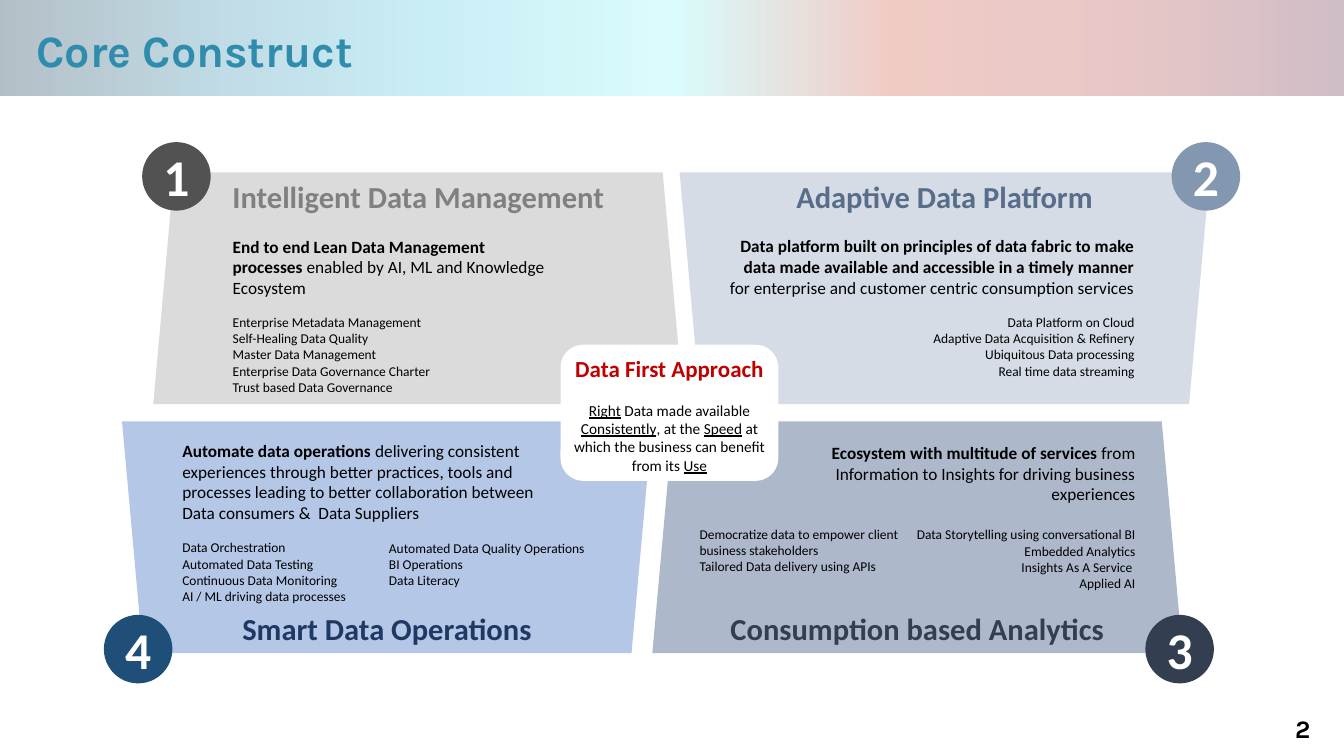
from dataclasses import dataclass

from lxml import etree
from pptx import Presentation
from pptx.dml.color import RGBColor
from pptx.enum.shapes import MSO_SHAPE
from pptx.enum.text import MSO_ANCHOR, MSO_AUTO_SIZE, PP_ALIGN
from pptx.oxml.ns import qn
from pptx.util import Inches, Pt

LEFT, CENTER, RIGHT = PP_ALIGN.LEFT, PP_ALIGN.CENTER, PP_ALIGN.RIGHT
TOP, MIDDLE = MSO_ANCHOR.TOP, MSO_ANCHOR.MIDDLE
RECT, OVAL = MSO_SHAPE.RECTANGLE, MSO_SHAPE.OVAL
ROUND, TRAPEZOID = MSO_SHAPE.ROUNDED_RECTANGLE, MSO_SHAPE.TRAPEZOID
NO_FIT = MSO_AUTO_SIZE.NONE

Box = tuple[float, float, float, float]


@dataclass(frozen=True)
class Theme:
    brand: str = "Karla"
    body: str = "Calibri"
    teal: str = "2F8CAD"
    red: str = "C00000"
    black: str = "000000"
    white: str = "FFFFFF"
    band: tuple = ((0, "042843"), (17, "2F8CAD"), (31, "4BC4DF"), (50, "86F7F9"),
                   (66, "D05342"), (84, "B14540"), (100, "602441"))
    veil: int = 70
    title: float = 32
    page: float = 18
    badge: float = 36.8
    head: float = 21.8
    core: float = 16.4
    lead: float = 12.3
    claim: float = 10.9
    item: float = 9.6


THEME = Theme()


@dataclass(frozen=True)
class Run:
    text: str
    bold: bool = False
    under: bool = False


@dataclass(frozen=True)
class Para:
    runs: tuple[Run, ...]
    size: float
    color: str = THEME.black
    gap: float = 0
    line: float = 1
    font: str = THEME.body


@dataclass(frozen=True)
class Panel:
    number: int
    head: str
    left: float
    top: float
    flip: bool
    fill: str
    head_at: tuple[float, float]
    ink: str
    badge_at: tuple[float, float]
    badge: str


@dataclass(frozen=True)
class Note:
    box: Box
    align: PP_ALIGN
    items: tuple[str, ...]
    lead: tuple[str, str] = ()
    gap: float = 11.7


PANELS = (
    Panel(1, "Intelligent Data Management", 1.52, 1.71, False, "DBDBDB",
          (2.08, 1.79), "808080", (1.41, 1.41), "525252"),
    Panel(2, "Adaptive Data Platform", 6.74, 1.71, True, "D6DCE5",
          (7.3, 1.79), "586D8A", (11.62, 1.41), "8497B0"),
    Panel(3, "Consumption based Analytics", 6.47, 4.18, False, "ADB9CA",
          (7.03, 6.07), "333F50", (11.36, 6.1), "333F50"),
    Panel(4, "Smart Data Operations", 1.21, 4.18, True, "B4C7E7",
          (1.77, 6.07), "203864", (1.03, 6.1), "1F4E79"),
)

NOTES = (
    Note((2.21, 2.29, 3.41, 1.68), LEFT,
         ("Enterprise Metadata Management", "Self-Healing Data Quality",
          "Master Data Management", "Enterprise Data Governance Charter",
          "Trust based Data Governance"),
         ("End to end Lean Data Management processes ",
          "enabled by AI, ML and Knowledge Ecosystem")),
    Note((7.13, 2.29, 4.22, 1.73), RIGHT,
         ("Data Platform on Cloud", "Adaptive Data Acquisition & Refinery",
          "Ubiquitous Data processing", "Real time data streaming"),
         ("Data platform built on principles of data fabric to make data made "
          "available and accessible in a timely manner ",
          "for enterprise and customer centric consumption services")),
    Note((7.53, 4.34, 3.83, 1.8), RIGHT,
         ("Data Storytelling using conversational BI", "Embedded Analytics",
          "Insights As A Service ", "Applied AI"),
         ("Ecosystem with multitude of services ",
          "from Information to Insights for driving business experiences"), 15.8),
    Note((1.71, 4.32, 3.91, 1.73), LEFT,
         ("Data Orchestration", "Automated Data Testing",
          "Continuous Data Monitoring", "AI / ML driving data processes"),
         ("Automate data operations ",
          "delivering consistent experiences through better practices, tools and "
          "processes leading to better collaboration between "
          "Data consumers &  Data Suppliers")),
    Note((3.76, 5.31, 2.16, 0.58), LEFT,
         ("Automated Data Quality Operations", "BI Operations", "Data Literacy")),
    Note((6.84, 5.17, 2.45, 0.58), LEFT,
         ("Democratize data to empower client business stakeholders",
          "Tailored Data delivery using APIs")),
)

CLAIM = (Run("Right", under=True), Run(" Data made available "),
         Run("Consistently", under=True), Run(", at the "), Run("Speed", under=True),
         Run(" at which the business can benefit from its "), Run("Use", under=True))


def write(frame, paras: list[Para], align: PP_ALIGN, anchor=TOP, wrap: bool = True) -> None:
    frame.word_wrap = wrap
    frame.auto_size = NO_FIT
    frame.vertical_anchor = anchor
    for index, para in enumerate(paras):
        line = frame.add_paragraph() if index else frame.paragraphs[0]
        line.alignment = align
        line.line_spacing = para.line
        line.space_before = Pt(para.gap)
        line.font.name = para.font
        line.font.size = Pt(para.size)
        line.font.color.rgb = RGBColor.from_string(para.color)
        same = len({run.bold for run in para.runs}) == 1
        if same:
            line.font.bold = para.runs[0].bold
        for part in para.runs:
            run = line.add_run()
            run.text = part.text
            if not same:
                run.font.bold = part.bold
            if part.under:
                run.font.underline = True


def add_text(slide, box: Box, paras: list[Para], align: PP_ALIGN, anchor=TOP) -> None:
    shape = slide.shapes.add_textbox(*map(Inches, box))
    write(shape.text_frame, paras, align, anchor)


def add_form(slide, kind: MSO_SHAPE, box: Box, fill: str):
    shape = slide.shapes.add_shape(kind, *map(Inches, box))
    shape.shadow.inherit = False
    shape.line.fill.background()
    shape.fill.solid()
    shape.fill.fore_color.rgb = RGBColor.from_string(fill)
    return shape


def add_band(slide) -> None:
    """Draw the gradient strip and the pale veil that softens it."""
    band = add_form(slide, RECT, (0, 0, 13.33, 0.95), THEME.teal)
    band.fill.gradient()
    band.fill.gradient_angle = 0
    stops = next(band.element.iter(qn("a:gsLst")))
    for stop in list(stops):
        stops.remove(stop)
    for place, color in THEME.band:
        stop = etree.SubElement(stops, qn("a:gs"), pos=str(place * 1000))
        etree.SubElement(stop, qn("a:srgbClr"), val=color)
    veil = add_form(slide, RECT, (0, 0, 13.33, 7.5), THEME.white)
    tint = next(veil.element.iter(qn("a:srgbClr")))
    etree.SubElement(tint, qn("a:alpha"), val=str(THEME.veil * 1000))


def add_title(slide, text: str) -> None:
    """Fill the title placeholder and raise it above the band."""
    title = slide.shapes.title
    title.left, title.top, title.width, title.height = map(Inches, (0.26, 0.18, 10.62, 0.64))
    para = Para((Run(text, True),), THEME.title, THEME.teal, font=THEME.brand)
    write(title.text_frame, [para], LEFT)
    title.element.getparent().append(title.element)


def add_panel(slide, panel: Panel) -> None:
    shape = add_form(slide, TRAPEZOID, (panel.left, panel.top, 5.26, 2.3), panel.fill)
    shape.adjustments[0] = 0.09
    shape.rotation = 180 if panel.flip else 0
    head = Para((Run(panel.head, True),), THEME.head, panel.ink, line=0.8)
    add_text(slide, (*panel.head_at, 4.14, 0.4), [head], CENTER)
    badge = add_form(slide, OVAL, (*panel.badge_at, 0.68, 0.68), panel.badge)
    frame = badge.text_frame
    frame.margin_left = frame.margin_right = Inches(0.07)
    frame.margin_top = frame.margin_bottom = Inches(0.03)
    digit = Para((Run(str(panel.number), True),), THEME.badge, THEME.white)
    write(frame, [digit], CENTER, MIDDLE, wrap=False)


def add_note(slide, note: Note) -> None:
    paras = [Para((Run(text),), THEME.item, gap=0 if index or not note.lead else note.gap)
             for index, text in enumerate(note.items)]
    if note.lead:
        strong, plain = note.lead
        paras.insert(0, Para((Run(strong, True), Run(plain)), THEME.lead))
    add_text(slide, note.box, paras, note.align)


def main() -> None:
    deck = Presentation()
    deck.slide_width, deck.slide_height = Inches(13.33), Inches(7.5)
    slide = deck.slides.add_slide(deck.slide_layouts[5])
    add_band(slide)
    page = Para((Run("2", True),), THEME.page, font=THEME.brand)
    add_text(slide, (12.52, 6.95, 0.8, 0.55), [page], CENTER, MIDDLE)
    add_title(slide, "Core Construct")
    for panel in PANELS:
        add_panel(slide, panel)
    add_form(slide, ROUND, (5.56, 3.42, 2.16, 1.35), THEME.white)
    core = Para((Run("Data First Approach", True),), THEME.core, THEME.red)
    add_text(slide, (5.56, 3.47, 2.16, 1.29),
             [core, Para(CLAIM, THEME.claim, gap=13.3)], CENTER)
    for note in NOTES:
        add_note(slide, note)
    deck.save("out.pptx")


if __name__ == "__main__":
    main()
